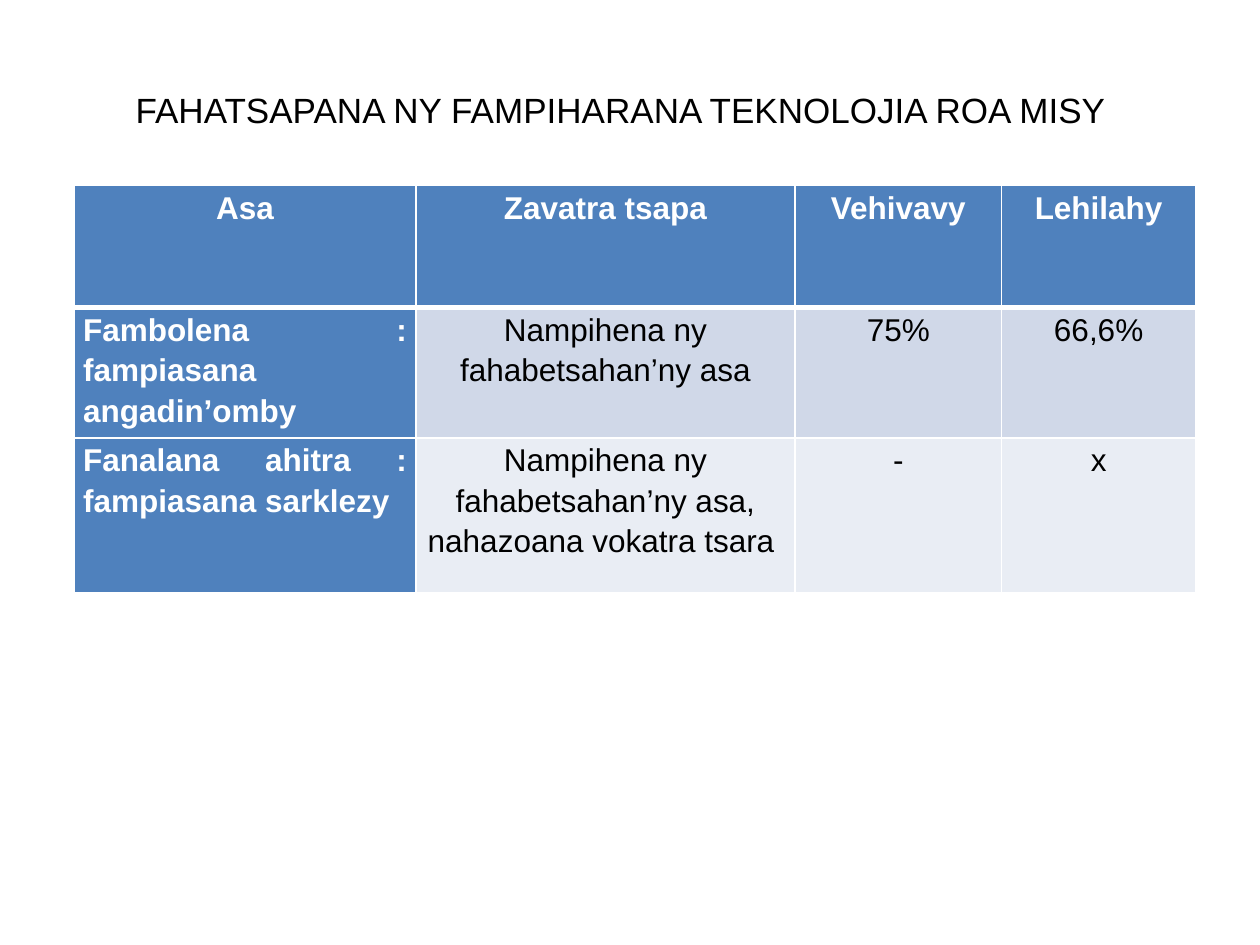
from lxml.etree import SubElement
from pptx import Presentation
from pptx.dml.color import RGBColor
from pptx.enum.text import MSO_ANCHOR, PP_ALIGN
from pptx.oxml.ns import qn
from pptx.util import Inches, Pt

TITLE = "FAHATSAPANA NY FAMPIHARANA TEKNOLOJIA ROA MISY"
ROWS = [
    ("Asa", "Zavatra tsapa", "Vehivavy", "Lehilahy"),
    ("Fambolena : fampiasana angadin’omby",
     "Nampihena ny fahabetsahan’ny asa", "75%", "66,6%"),
    ("Fanalana ahitra : fampiasana sarklezy",
     "Nampihena ny fahabetsahan’ny asa, nahazoana vokatra tsara ", "-", "x"),
]
WIDTHS = (2.71, 3.01, 1.64, 1.54)
HEIGHTS = (0.97, 0.97, 1.23)
BANDS = (None, "D0D8E8", "E9EDF4")
BLUE, WHITE, BLACK = "4F81BD", "FFFFFF", "000000"


def rgb(code):
    return RGBColor.from_string(code)


def write(frame, text, size=18, color=BLACK, bold=False,
          align=PP_ALIGN.CENTER, space=1.0):
    frame.word_wrap = True
    par = frame.paragraphs[0]
    par.alignment = align
    par.line_spacing = space
    run = par.add_run()
    run.text = text
    font = run.font
    font.name, font.size, font.bold = "Arial", Pt(size), bold
    font.color.rgb = rgb(color)


def edge(cell, **sides):
    """Draw white cell borders; sides maps L, R, T, B to points."""
    props = cell._tc.get_or_add_tcPr()
    for at, (side, width) in enumerate(sides.items()):
        line = props.makeelement(qn(f"a:ln{side}"), {"w": str(Pt(width))})
        fill = SubElement(line, qn("a:solidFill"))
        SubElement(fill, qn("a:srgbClr"), val=WHITE)
        props.insert(at, line)


def add_title(slide):
    box = slide.shapes.add_textbox(
        Inches(0.75), Inches(0.36), Inches(8.35), Inches(1.02))
    box.text_frame.vertical_anchor = MSO_ANCHOR.MIDDLE
    write(box.text_frame, TITLE, size=20)


def add_grid(slide):
    table = slide.shapes.add_table(
        len(ROWS), len(WIDTHS), Inches(0.59), Inches(1.47),
        Inches(sum(WIDTHS)), Inches(sum(HEIGHTS))).table
    for col, width in zip(table.columns, WIDTHS):
        col.width = Inches(width)
    for row, height in zip(table.rows, HEIGHTS):
        row.height = Inches(height)
    for r, texts in enumerate(ROWS):
        for c, text in enumerate(texts):
            cell = table.cell(r, c)
            head = r == 0 or c == 0
            cell.margin_left = cell.margin_right = Inches(0.07)
            cell.margin_top = cell.margin_bottom = 0
            cell.fill.solid()
            cell.fill.fore_color.rgb = rgb(BLUE if head else BANDS[r])
            edge(cell, L=1, R=1, T=3 if r == 1 else 1, B=3 if r == 0 else 1)
            write(cell.text_frame, text, color=WHITE if head else BLACK,
                  bold=head, space=1.15,
                  align=PP_ALIGN.JUSTIFY if r and c == 0 else PP_ALIGN.CENTER)


def main():
    deck = Presentation()
    deck.slide_width, deck.slide_height = Inches(10), Inches(7.5)
    slide = deck.slides.add_slide(deck.slide_layouts[6])
    add_title(slide)
    add_grid(slide)
    deck.save("out.pptx")


if __name__ == "__main__":
    main()
